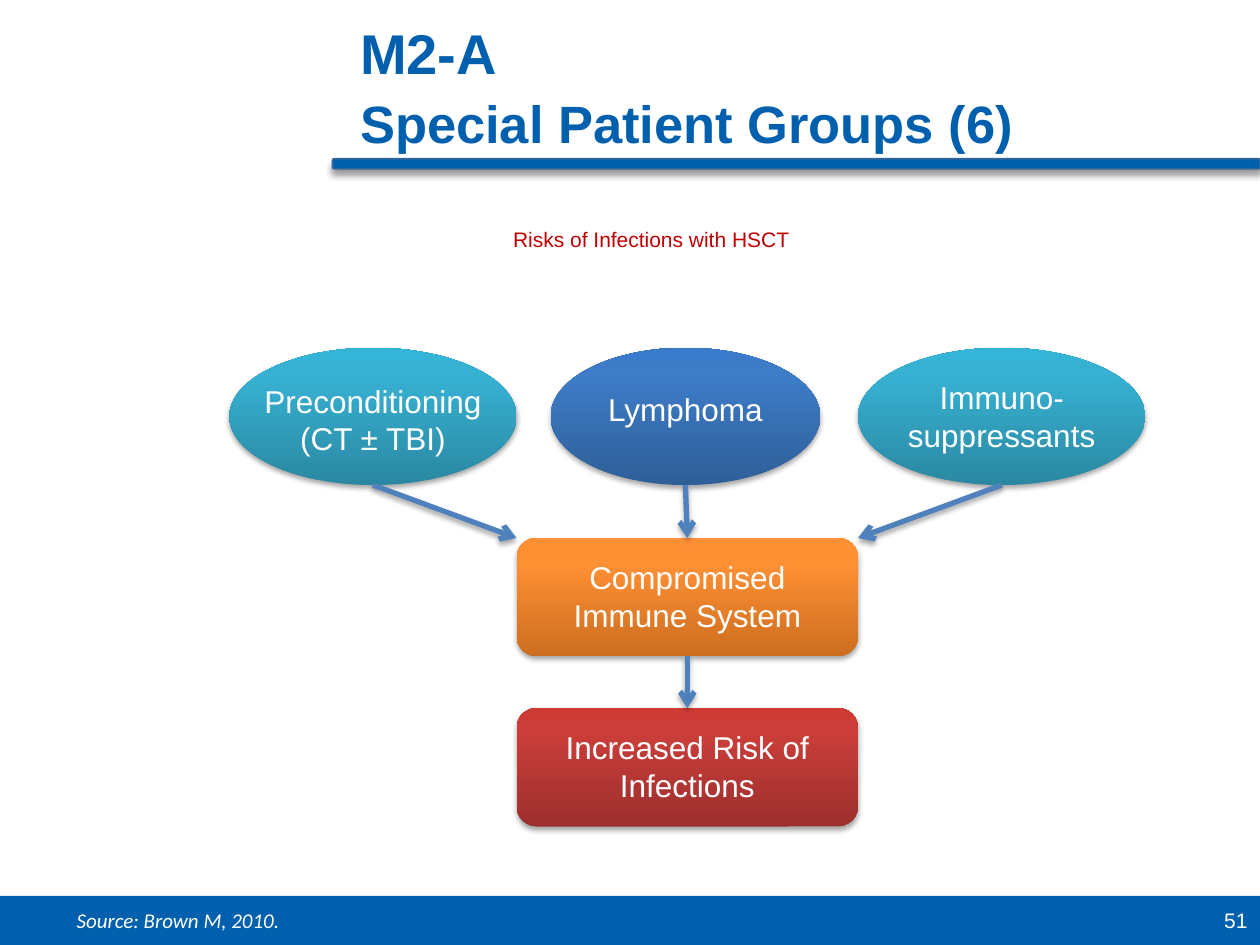
from lxml.etree import SubElement
from pptx import Presentation
from pptx.dml.color import RGBColor
from pptx.enum.shapes import MSO_CONNECTOR, MSO_SHAPE
from pptx.enum.text import MSO_ANCHOR, PP_ALIGN
from pptx.oxml.ns import qn
from pptx.util import Inches, Pt

COLORS = {"blue": "0060AD", "bar_line": "336699", "arrow": "4F81BD",
          "subtitle": "C00000", "white": "FFFFFF", "shadow": "000000"}
# Gradient stops run from the bottom of a shape to its top.
GRADIENTS = {
    "teal": ("2A88A2", "37B1D2", "34B4D6"),
    "navy": ("2F5F99", "3D7CC7", "3A7CCB"),
    "orange": ("CC6E20", "FF9034", "FF9136"),
    "red": ("9C2F2D", "CB3E3A", "CE3B37"),
}
STOP_POSITIONS = (0, 80, 100)

TITLE = [("M2-A ", 32), ("Special Patient Groups (6)", 30)]
SUBTITLE = "Risks of Infections with HSCT"
SOURCE = "Source: Brown M, 2010."
PAGE_NUMBER = "51"

# Lines, gradient, left, width, top of the label
CAUSES = [
    (["Preconditioning", "(CT ± TBI)"], "teal", 1.82, 2.28, 2.98),
    (["Lymphoma"], "navy", 4.37, 2.14, 3.05),
    (["Immuno-suppressants"], "teal", 6.81, 2.28, 2.95),
]
CAUSE_TOP, CAUSE_HEIGHT = 2.76, 1.09
# Text, gradient, top
EFFECTS = [
    ("Compromised Immune System", "orange", 4.27),
    ("Increased Risk of Infections", "red", 5.62),
]
EFFECT_LEFT, EFFECT_WIDTH, EFFECT_HEIGHT = 4.1, 2.71, 0.94
CAUSE_LABEL_WIDTH, EFFECT_LABEL_WIDTH = 1.98, 2.4


def rgb(name):
    return RGBColor.from_string(COLORS[name])


def add_shadow(shape, opacity=35, blur=3.1, distance=1.8):
    """Give a shape or connector a soft shadow falling straight down."""
    effects = SubElement(shape._element.spPr, qn("a:effectLst"))
    shadow = SubElement(effects, qn("a:outerShdw"), blurRad=str(Pt(blur)),
                        dist=str(Pt(distance)), dir="5400000", rotWithShape="0")
    color = SubElement(shadow, qn("a:srgbClr"), val=COLORS["shadow"])
    SubElement(color, qn("a:alpha"), val=str(opacity * 1000))


def set_gradient(shape, name):
    shape.fill.background()
    no_fill = shape._element.spPr.find(qn("a:noFill"))
    gradient = SubElement(shape._element.spPr, qn("a:gradFill"), rotWithShape="1")
    stops = SubElement(gradient, qn("a:gsLst"))
    for position, color in zip(STOP_POSITIONS, GRADIENTS[name]):
        stop = SubElement(stops, qn("a:gs"), pos=str(position * 1000))
        SubElement(stop, qn("a:srgbClr"), val=color)
    SubElement(gradient, qn("a:lin"), ang="16200000", scaled="0")
    shape._element.spPr.replace(no_fill, gradient)


def add_solid(slide, kind, left, top, width, height):
    shape = slide.shapes.add_shape(kind, Inches(left), Inches(top),
                                   Inches(width), Inches(height))
    shape.fill.solid()
    shape.fill.fore_color.rgb = rgb("blue")
    shape.line.fill.background()
    return shape


def add_node(slide, kind, gradient, left, top, width, height):
    shape = add_solid(slide, kind, left, top, width, height)
    set_gradient(shape, gradient)
    add_shadow(shape)
    return shape


def add_run(paragraph, text, size, color, font="Arial", bold=False, italic=False):
    run = paragraph.add_run()
    run.text = text
    run.font.name = font
    run.font.size = Pt(size)
    run.font.bold = bold
    run.font.italic = italic
    run.font.color.rgb = rgb(color)


def add_box(slide, left, top, width, height, anchor=MSO_ANCHOR.TOP):
    box = slide.shapes.add_textbox(Inches(left), Inches(top),
                                   Inches(width), Inches(height))
    box.text_frame.word_wrap = True
    box.text_frame.vertical_anchor = anchor
    return box.text_frame


def add_label(slide, lines, left, top, width, height=0.71):
    frame = add_box(slide, left, top, width, height)
    for index, line in enumerate(lines):
        paragraph = frame.add_paragraph() if index else frame.paragraphs[0]
        paragraph.alignment = PP_ALIGN.CENTER
        add_run(paragraph, line, 18, "white")


def add_arrow(slide, start, end):
    points = [Inches(value) for value in (*start, *end)]
    arrow = slide.shapes.add_connector(MSO_CONNECTOR.STRAIGHT, *points)
    arrow.line.color.rgb = rgb("arrow")
    arrow.line.width = Pt(3)
    SubElement(arrow.line._get_or_add_ln(), qn("a:tailEnd"), type="arrow")
    add_shadow(arrow)
    return arrow


def add_frame(slide):
    """Add the footer, page number, title, title bar and subtitle."""
    add_solid(slide, MSO_SHAPE.RECTANGLE, 0, 7.11, 10, 0.39).shadow.inherit = False
    number = add_box(slide, 7.67, 7.11, 2.33, 0.39, MSO_ANCHOR.MIDDLE).paragraphs[0]
    number.alignment = PP_ALIGN.RIGHT
    add_run(number, PAGE_NUMBER, 12, "white")

    bar = add_solid(slide, MSO_SHAPE.ROUNDED_RECTANGLE, 2.64, 1.26, 7.36, 0.08)
    bar.line.color.rgb = rgb("bar_line")
    bar.line.width = Pt(1)
    add_shadow(bar, 40, 4, 3)

    title = add_box(slide, 2.76, 0.17, 7.24, 0.99, MSO_ANCHOR.MIDDLE).paragraphs[0]
    title.line_spacing = 1.08
    for index, (text, size) in enumerate(TITLE):
        if index:
            title.add_line_break()
        add_run(title, text, size, "blue", bold=True)

    subtitle = add_box(slide, 2.31, 1.75, 5.72, 0.62).paragraphs[0]
    subtitle.alignment = PP_ALIGN.CENTER
    add_run(subtitle, SUBTITLE, 12, "subtitle")

    source = add_box(slide, 0.51, 7.15, 8.97, 0.3).paragraphs[0]
    add_run(source, SOURCE, 12, "white", font="Calibri", italic=True)


def add_diagram(slide):
    for lines, gradient, left, width, label_top in CAUSES:
        add_node(slide, MSO_SHAPE.OVAL, gradient, left, CAUSE_TOP, width, CAUSE_HEIGHT)
        label_left = left + (width - CAUSE_LABEL_WIDTH) / 2
        label_height = 0.4 if lines == ["Lymphoma"] else 0.71
        add_label(slide, lines, label_left, label_top, CAUSE_LABEL_WIDTH, label_height)

    effects = []
    for text, gradient, top in EFFECTS:
        effects.append(add_node(slide, MSO_SHAPE.ROUNDED_RECTANGLE, gradient,
                                EFFECT_LEFT, top, EFFECT_WIDTH, EFFECT_HEIGHT))
        label_left = EFFECT_LEFT + (EFFECT_WIDTH - EFFECT_LABEL_WIDTH) / 2
        add_label(slide, [text], label_left, top + 0.11, EFFECT_LABEL_WIDTH)

    compromised, infections = effects
    effect_top = EFFECTS[0][2]
    middle = EFFECT_LEFT + EFFECT_WIDTH / 2
    ends = (EFFECT_LEFT, middle, EFFECT_LEFT + EFFECT_WIDTH)
    for (_, _, left, width, _), end in zip(CAUSES, ends):
        start = (left + width / 2, CAUSE_TOP + CAUSE_HEIGHT)
        arrow = add_arrow(slide, start, (end, effect_top))
        if end == middle:
            arrow.end_connect(compromised, 0)

    arrow = add_arrow(slide, (middle, effect_top + EFFECT_HEIGHT), (middle, EFFECTS[1][2]))
    arrow.begin_connect(compromised, 2)
    arrow.end_connect(infections, 0)


def main():
    presentation = Presentation()
    presentation.slide_width = Inches(10)
    presentation.slide_height = Inches(7.5)
    slide = presentation.slides.add_slide(presentation.slide_layouts[6])
    add_frame(slide)
    add_diagram(slide)
    presentation.save("out.pptx")


if __name__ == "__main__":
    main()
